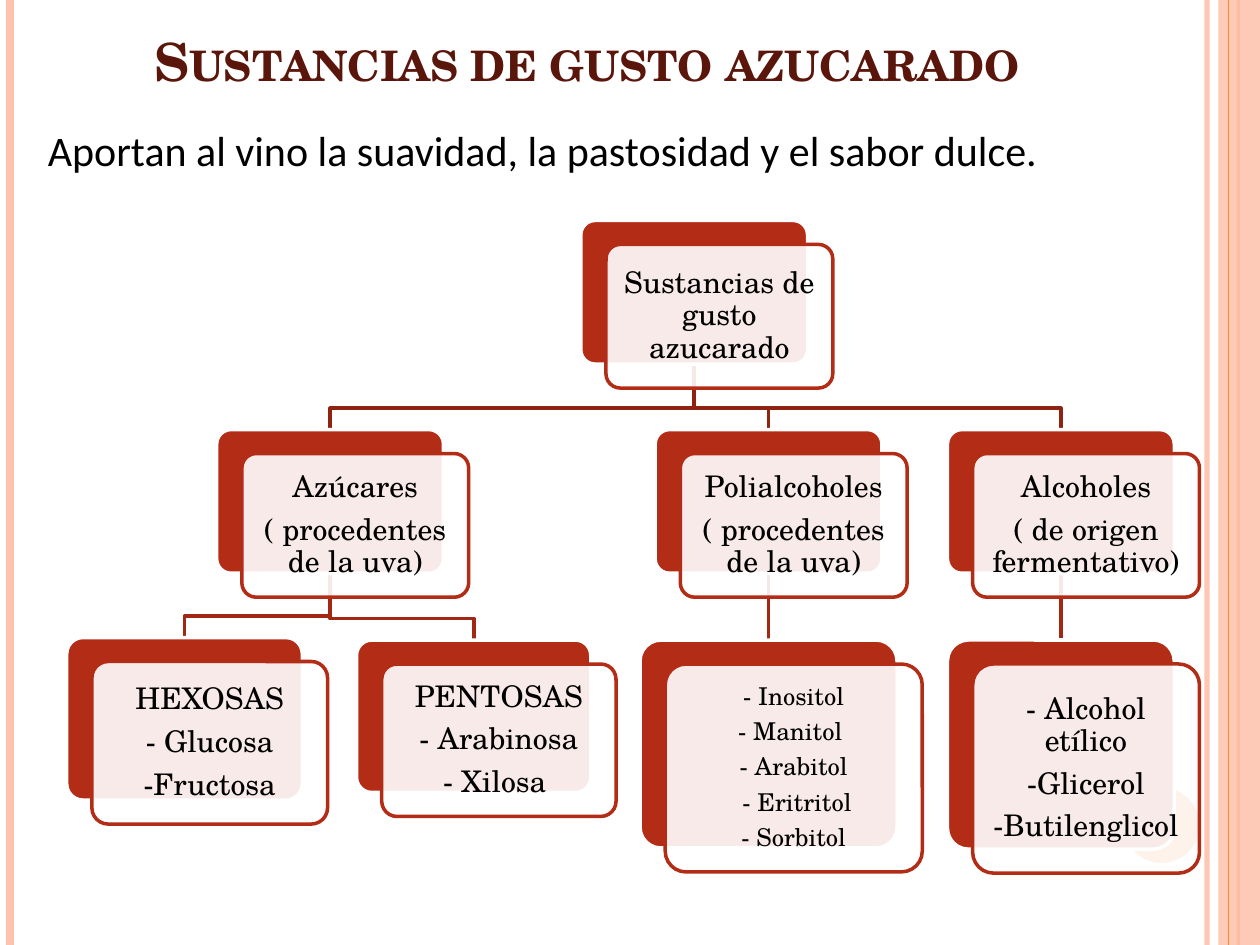
from dataclasses import dataclass

from lxml import etree
from pptx import Presentation
from pptx.dml.color import RGBColor
from pptx.enum.shapes import MSO_CONNECTOR as Connector, MSO_SHAPE as Shape
from pptx.enum.text import MSO_ANCHOR as Anchor, MSO_AUTO_SIZE as AutoSize, PP_ALIGN as Align
from pptx.oxml.ns import qn
from pptx.util import Inches, Pt

PEACH = RGBColor(0xFE, 0xC3, 0xAE)
ORANGE = RGBColor(0xFE, 0x86, 0x37)
RED = RGBColor(0xB3, 0x2C, 0x16)
UPPER_LINK = RGBColor(0x8F, 0x23, 0x12)
LOWER_LINK = RGBColor(0xA2, 0x28, 0x14)
MAROON = RGBColor(0x5A, 0x16, 0x0B)
BLACK = RGBColor(0, 0, 0)
WHITE = RGBColor(255, 255, 255)
SERIF = "TeX Gyre Schola"
SANS = "Calibri"
CARD_OFFSET = Inches(0.2), Inches(0.19)
BEND_GAP = Inches(0.17)  # from the bend of a link to the card below


@dataclass
class Node:
    lines: list
    left: float
    top: float
    width: float = 1.8
    height: float = 1.14
    size: int = 17
    parent: str = ""

    def box(self):
        return [Inches(value) for value in (self.left, self.top, self.width, self.height)]


NODES = {
    "root": Node(["Sustancias de gusto azucarado"], 4.61, 1.75),
    "sugars": Node(["Azúcares", "( procedentes de la uva)"], 1.72, 3.41, parent="root"),
    "polyols": Node(["Polialcoholes", "( procedentes de la uva)"], 5.2, 3.41, parent="root"),
    "alcohols": Node(["Alcoholes", "( de origen fermentativo)"], 7.52, 3.41, parent="root"),
    "hexoses": Node(["HEXOSAS", "- Glucosa", "-Fructosa"],
                    0.53, 5.06, 1.87, 1.29, parent="sugars"),
    "pentoses": Node(["PENTOSAS", "- Arabinosa", "- Xilosa "],
                     2.83, 5.08, 1.86, 1.21, parent="sugars"),
    "polyol list": Node(["- Inositol", "- Manitol ", "- Arabitol", " - Eritritol", "- Sorbitol"],
                        5.08, 5.08, 2.04, 1.65, size=14, parent="polyols"),
    "alcohol list": Node(["- Alcohol etílico", "-Glicerol", "-Butilenglicol"],
                         7.52, 5.08, 1.8, 1.66, parent="alcohols"),
}


def set_opacity(element, percent):
    """Make the solid fill directly under a shape's spPr or ln element translucent."""
    color = element.find(qn("a:solidFill"))[0]
    etree.SubElement(color, qn("a:alpha")).set("val", str(percent * 1000))


def add_line(slide, start, end, color, width):
    line = slide.shapes.add_connector(Connector.STRAIGHT, *start, *end)
    line.line.color.rgb = color
    line.line.width = Pt(width)
    etree.SubElement(line._element.spPr, qn("a:effectLst"))
    return line


def add_filled(slide, kind, box, color):
    shape = slide.shapes.add_shape(kind, *box)
    shape.shadow.inherit = False
    shape.fill.solid()
    shape.fill.fore_color.rgb = color
    shape.line.fill.background()
    return shape


def add_borders(slide, height):
    def stripe(x, color, width):
        return add_line(slide, (Inches(x), 0), (Inches(x), height), color, width)

    inner = stripe(9.58, PEACH, 3)
    set_opacity(inner._element.spPr.find(qn("a:ln")), 93)
    stripe(0.08, PEACH, 4.5)
    stripe(9.83, ORANGE, 1.5)
    band = add_filled(slide, Shape.RECTANGLE, (Inches(9.67), 0, Inches(0.33), height), PEACH)
    set_opacity(band._element.spPr, 87)
    stripe(9.75, ORANGE, 0.75)
    add_filled(slide, Shape.OVAL, [Inches(v) for v in (8.92, 6.25, 0.6, 0.6)], ORANGE)


def format_title(title, box):
    title.left, title.top, title.width, title.height = box
    frame = title.text_frame
    frame.text = "Sustancias de gusto azucarado "
    frame.auto_size = AutoSize.NONE
    frame.vertical_anchor = Anchor.BOTTOM
    paragraph = frame.paragraphs[0]
    paragraph.alignment = Align.CENTER
    font = paragraph.font
    font.name, font.size, font.bold = SERIF, Pt(30), True
    font.color.rgb = MAROON
    font._element.set("cap", "small")


def add_intro(slide, box):
    frame = slide.shapes.add_textbox(*box).text_frame
    frame.word_wrap = True
    frame.margin_left = 0
    frame.text = "Aportan al vino la suavidad, la pastosidad y el sabor dulce."
    font = frame.paragraphs[0].font
    font.name, font.size = SANS, Pt(24)
    font.color.rgb = BLACK


def add_link(slide, parent, child, color):
    """Link two boxes from bottom to top; return the connector if it is straight."""
    start = parent[0] + parent[2] // 2, parent[1] + parent[3]
    end = child[0] + child[2] // 2, child[1]
    if abs(start[0] - end[0]) < Inches(0.02):
        return add_line(slide, start, end, color, 2)
    bend = end[1] - BEND_GAP
    builder = slide.shapes.build_freeform(*start, scale=1.0)
    builder.add_line_segments([(start[0], bend), (end[0], bend), end], close=False)
    elbow = builder.convert_to_shape()
    elbow.shadow.inherit = False
    elbow.fill.background()
    elbow.line.color.rgb = color
    elbow.line.width = Pt(2)
    return None


def add_card(slide, box, node):
    """Add a red card with a translucent text card over it; return the red one."""
    left, top, width, height = box
    front_box = left + CARD_OFFSET[0], top + CARD_OFFSET[1], width, height
    back = add_filled(slide, Shape.ROUNDED_RECTANGLE, box, RED)
    front = add_filled(slide, Shape.ROUNDED_RECTANGLE, front_box, WHITE)
    set_opacity(front._element.spPr, 90)
    for card, border in ((back, WHITE), (front, RED)):
        card.adjustments[0] = 0.1
        card.line.color.rgb = border
        card.line.width = Pt(2)

    frame = front.text_frame
    frame.word_wrap = True
    frame.vertical_anchor = Anchor.MIDDLE
    frame.margin_left = frame.margin_right = Inches(0.03)
    frame.margin_top = frame.margin_bottom = Inches(0.03)
    frame.text = "\n".join(node.lines)
    for paragraph in frame.paragraphs:
        paragraph.alignment = Align.CENTER
        paragraph.line_spacing = 0.9
        paragraph.space_after = Pt(round(node.size * 0.35))
        paragraph.font.name, paragraph.font.size = SERIF, Pt(node.size)
        paragraph.font.color.rgb = BLACK
    return back


def add_tree(slide, nodes):
    """Draw the links first so that the cards lie over them, then join the straight ones."""
    links = {}
    for name, node in reversed(nodes.items()):
        if node.parent:
            color = UPPER_LINK if node.parent == "root" else LOWER_LINK
            links[name] = add_link(slide, nodes[node.parent].box(), node.box(), color)
    cards = {name: add_card(slide, node.box(), node) for name, node in nodes.items()}
    for name, link in links.items():
        if link is not None:
            link.begin_connect(cards[nodes[name].parent], 2)
            link.end_connect(cards[name], 0)


def main():
    presentation = Presentation()
    presentation.slide_width, presentation.slide_height = Inches(10), Inches(7.5)
    slide = presentation.slides.add_slide(presentation.slide_layouts[5])
    add_borders(slide, presentation.slide_height)
    format_title(slide.shapes.title, [Inches(v) for v in (0.62, 0, 8.17, 0.78)])
    add_intro(slide, [Inches(v) for v in (0.38, 0.94, 9.15, 0.86)])
    add_tree(slide, NODES)
    presentation.save("out.pptx")


if __name__ == "__main__":
    main()
